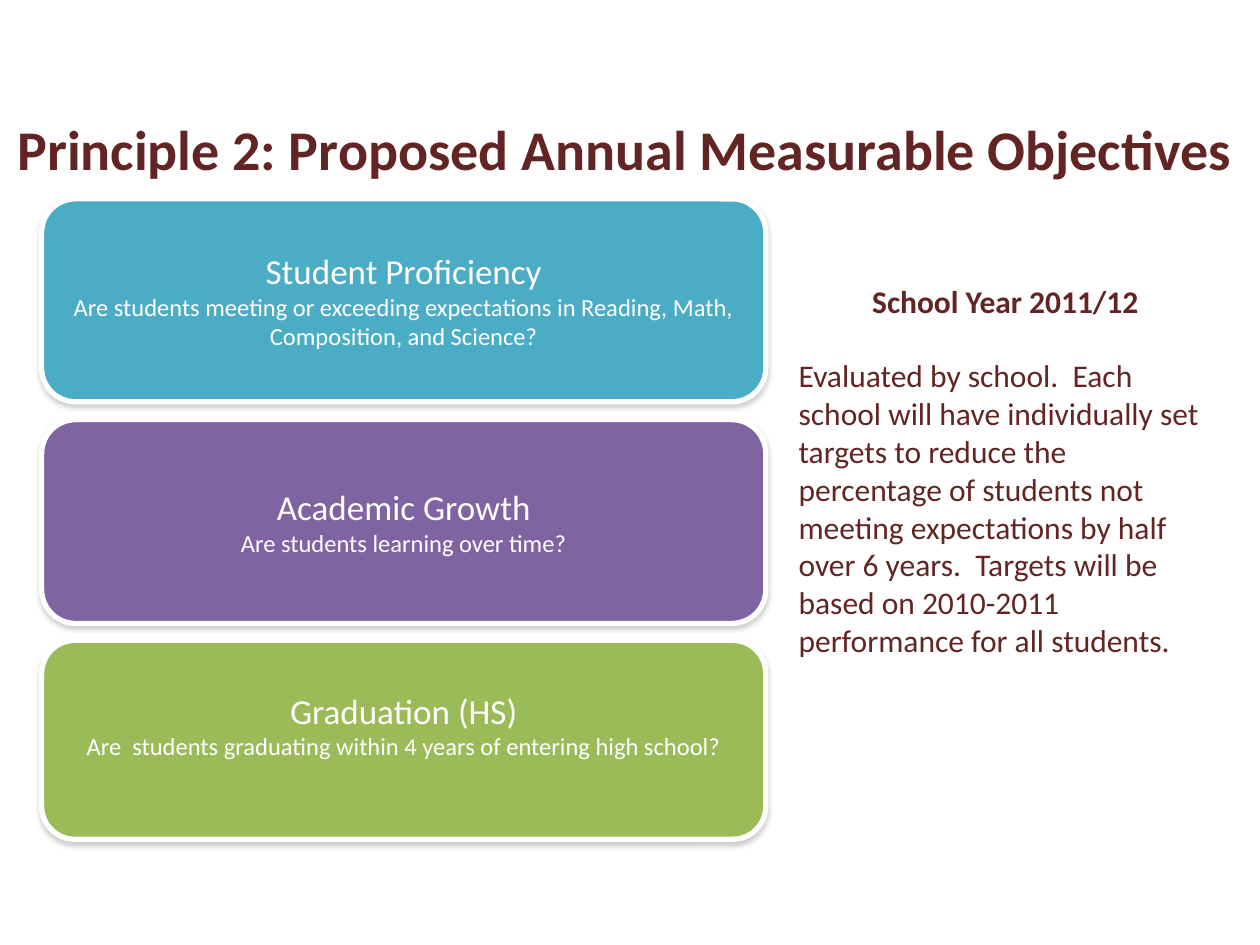
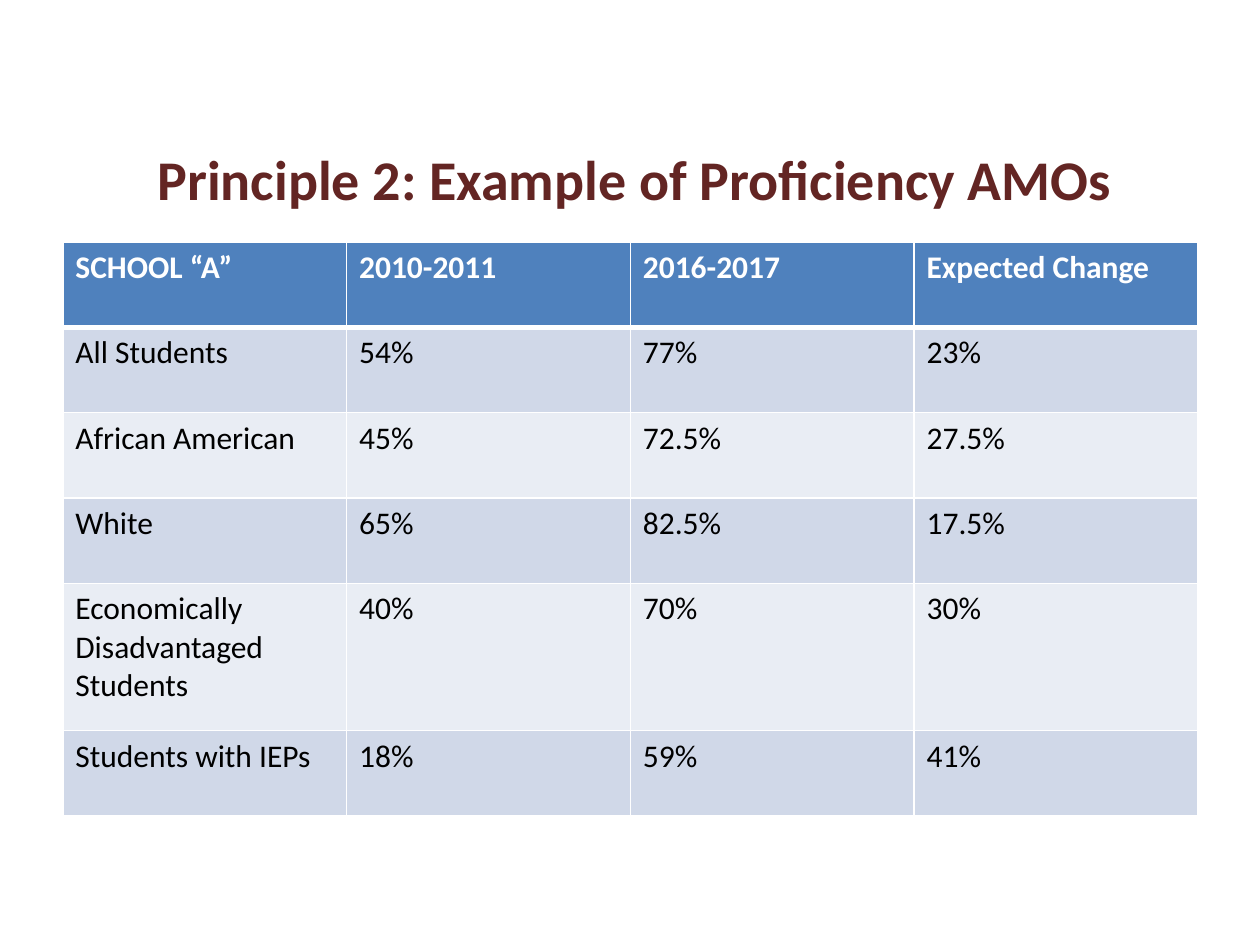
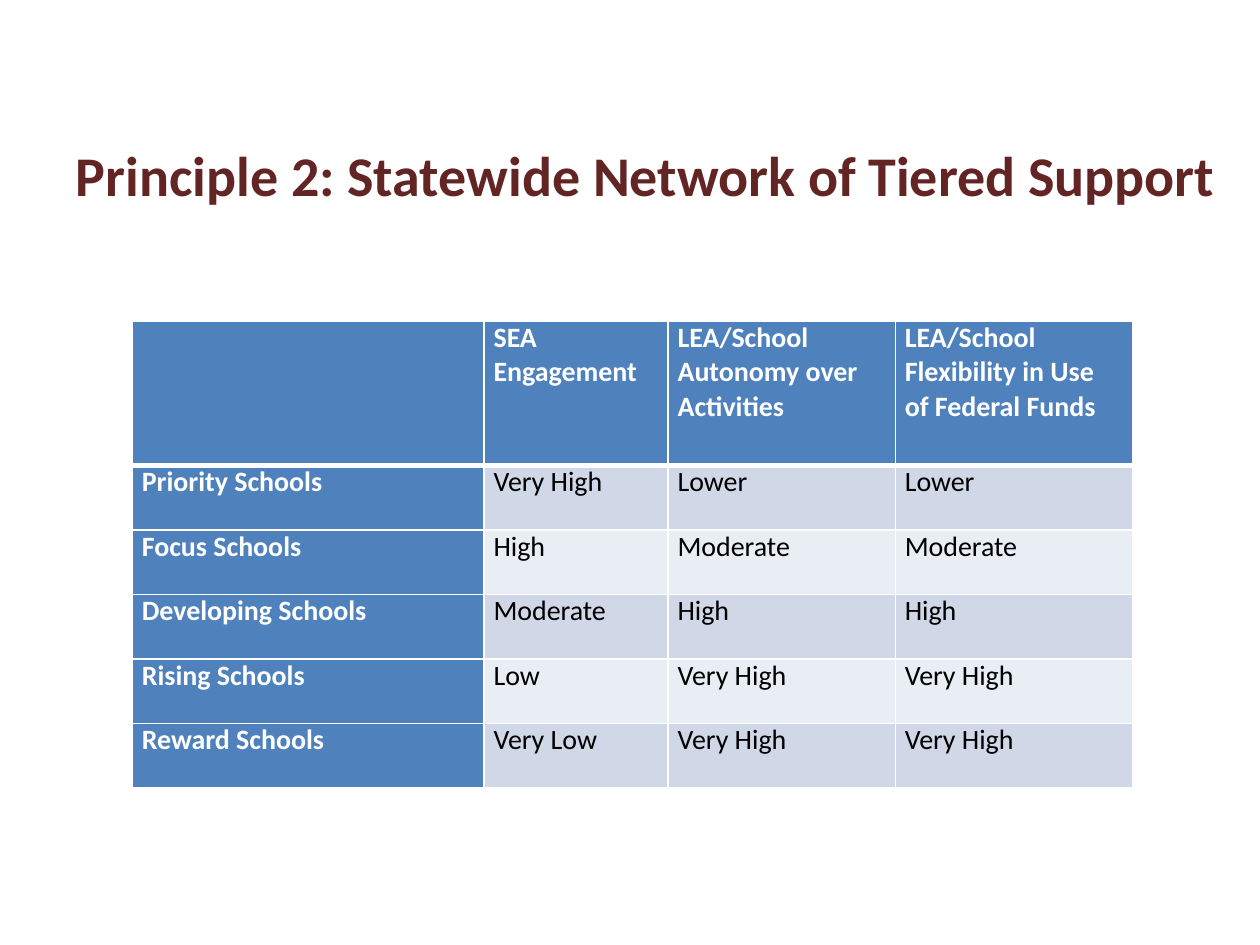
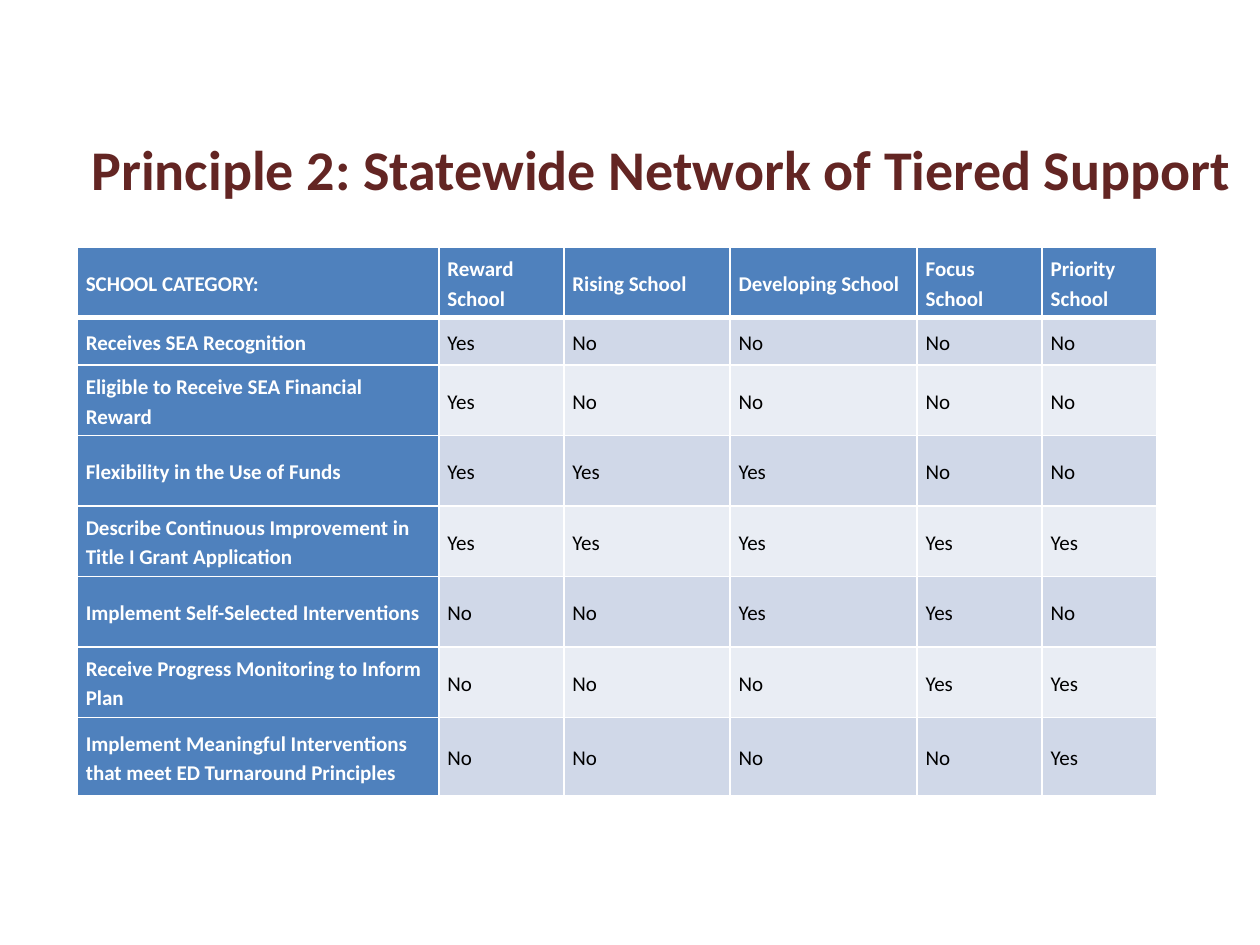
from dataclasses import dataclass
from typing import Optional

from lxml.etree import SubElement
from pptx import Presentation
from pptx.dml.color import RGBColor
from pptx.enum.shapes import MSO_SHAPE
from pptx.enum.text import MSO_ANCHOR, MSO_AUTO_SIZE, PP_ALIGN
from pptx.oxml.ns import qn
from pptx.slide import Slide
from pptx.table import _Cell
from pptx.util import Cm, Pt

FONT = "Calibri"
MAROON = RGBColor(0x63, 0x25, 0x23)
WHITE = RGBColor(0xFF, 0xFF, 0xFF)
BLACK = RGBColor(0x00, 0x00, 0x00)
TEAL = RGBColor(0x4B, 0xAC, 0xC6)
PURPLE = RGBColor(0x80, 0x64, 0xA2)
GREEN = RGBColor(0x9B, 0xBB, 0x59)
HEADER_BLUE = RGBColor(0x4F, 0x81, 0xBD)
BAND_DARK = RGBColor(0xD0, 0xD8, 0xE8)
BAND_LIGHT = RGBColor(0xE9, 0xED, 0xF4)
SHADOW_GRAY = RGBColor(0x80, 0x80, 0x80)

TITLE_HEIGHT = 3.18
CARD_LEFT, CARD_TOP, CARD_WIDTH, CARD_PITCH = 0.84, 4.01, 14.6, 4.45
NOTE_LEFT = 15.85


@dataclass(frozen=True)
class Title:
    text: str
    left: float
    top: float
    width: float


@dataclass(frozen=True)
class Card:
    heading: str
    question: str
    color: RGBColor
    height: float
    bottom_inset: float = 0.13


@dataclass(frozen=True)
class Note:
    text: str
    top: float
    width: float
    height: float
    align: PP_ALIGN
    bold: bool


@dataclass(frozen=True)
class Grid:
    left: float
    top: float
    column_widths: list[float]
    row_heights: list[float]
    rows: list[list[str]]
    text_size: int
    inset_x: float
    inset_y: float = 0
    header_column: bool = True
    anchor: MSO_ANCHOR = MSO_ANCHOR.TOP
    line_spacing: Optional[float] = None
    space_after: Optional[int] = None


OBJECTIVES_TITLE = Title("Principle 2: Proposed Annual Measurable Objectives", 0, 1.4, 25.2)
PROFICIENCY_TITLE = Title("Principle 2: Example of Proficiency AMOs", 0.2, 2, 25.2)
SUPPORT_TEXT = "Principle 2: Statewide Network of Tiered Support"
LEVELS_TITLE = Title(SUPPORT_TEXT, 1.27, 1.93, 23.5)
CATEGORIES_TITLE = Title(SUPPORT_TEXT, 1.27, 1.8, 24.13)

CARDS = [
    Card(
        "Student Proficiency",
        "Are students meeting or exceeding expectations in Reading, Math, Composition, and Science?",
        TEAL, 4.09,
    ),
    Card("Academic Growth", "Are students learning over time?", PURPLE, 4.11),
    Card(
        "Graduation (HS)",
        "Are  students graduating within 4 years of entering high school?",
        GREEN, 4.01, bottom_inset=0.72,
    ),
]

NOTES = [
    Note("School Year 2011/12", 5.56, 8.84, 1.03, PP_ALIGN.CENTER, True),
    Note(
        "Evaluated by school.  Each school will have individually set targets to reduce "
        "the percentage of students not meeting expectations by half over 6 years.  "
        "Targets will be based on 2010-2011 performance for all students.",
        7.06, 8.69, 6.4, PP_ALIGN.LEFT, False,
    ),
]

PROFICIENCY_GRID = Grid(
    left=1.27, top=4.88,
    column_widths=[5.72] * 4,
    row_heights=[1.72] * 4 + [2.97, 1.72],
    rows=[
        ["SCHOOL “A”", "2010-2011", "2016-2017", "Expected Change"],
        ["All Students", "54%", "77%", "23%"],
        ["African American", "45%", "72.5%", "27.5%"],
        ["White", "65%", "82.5%", "17.5%"],
        ["Economically Disadvantaged Students", "40%", "70%", "30%"],
        ["Students with IEPs", "18%", "59%", "41%"],
    ],
    text_size=18, inset_x=0.25, inset_y=0.13, header_column=False,
)

LEVELS_GRID = Grid(
    left=2.67, top=6.47,
    column_widths=[7.09, 3.71, 4.58, 4.78],
    row_heights=[2.91] + [1.3] * 5,
    rows=[
        ["", "SEA Engagement", "LEA/School Autonomy over Activities",
         "LEA/School Flexibility in Use of Federal Funds"],
        ["Priority Schools", "Very High", "Lower", "Lower"],
        ["Focus Schools", "High", "Moderate", "Moderate"],
        ["Developing Schools", "Moderate", "High", "High"],
        ["Rising Schools", "Low", "Very High", "Very High"],
        ["Reward Schools", "Very Low", "Very High", "Very High"],
    ],
    text_size=16, inset_x=0.19,
)

CATEGORIES_GRID = Grid(
    left=1.56, top=4.98,
    column_widths=[7.29, 2.52, 3.35, 3.77, 2.52, 2.3],
    row_heights=[1.42, 0.96] + [1.42] * 5 + [1.59],
    rows=[
        ["SCHOOL CATEGORY:", "Reward School", "Rising School", "Developing School",
         "Focus School", "Priority School"],
        ["Receives SEA Recognition", "Yes", "No", "No", "No", "No"],
        ["Eligible to Receive SEA Financial Reward", "Yes", "No", "No", "No", "No"],
        ["Flexibility in the Use of Funds", "Yes", "Yes", "Yes", "No", "No"],
        ["Describe Continuous Improvement in Title I Grant Application",
         "Yes", "Yes", "Yes", "Yes", "Yes"],
        ["Implement Self-Selected Interventions", "No", "No", "Yes", "Yes", "No"],
        ["Receive Progress Monitoring to Inform Plan", "No", "No", "No", "Yes", "Yes"],
        ["Implement Meaningful Interventions that meet ED Turnaround Principles",
         "No", "No", "No", "No", "Yes"],
    ],
    text_size=12, inset_x=0.17, anchor=MSO_ANCHOR.MIDDLE,
    line_spacing=1.15, space_after=10,
)


def style_runs(paragraph, size: int, color: RGBColor, bold: bool = False) -> None:
    for run in paragraph.runs:
        run.font.name = FONT
        run.font.size = Pt(size)
        run.font.bold = bold
        run.font.color.rgb = color


def add_titled_slide(deck, title: Title) -> Slide:
    slide = deck.slides.add_slide(deck.slide_layouts[5])
    heading = slide.shapes.title
    heading.left, heading.top = Cm(title.left), Cm(title.top)
    heading.width, heading.height = Cm(title.width), Cm(TITLE_HEIGHT)
    frame = heading.text_frame
    frame.text = title.text
    frame.vertical_anchor = MSO_ANCHOR.MIDDLE
    frame.paragraphs[0].alignment = PP_ALIGN.CENTER
    style_runs(frame.paragraphs[0], 32, MAROON, bold=True)
    return slide


def add_soft_shadow(shape) -> None:
    shape.shadow.inherit = False
    effects = shape._element.spPr.find(qn("a:effectLst"))
    shadow = SubElement(
        effects, qn("a:outerShdw"), blurRad=str(Pt(3.1)), dist=str(Pt(1.6)),
        dir="5400000", rotWithShape="0",
    )
    color = SubElement(shadow, qn("a:srgbClr"), val=str(SHADOW_GRAY))
    SubElement(color, qn("a:alpha"), val="38000")


def add_card(slide: Slide, card: Card, position: int) -> None:
    box = slide.shapes.add_shape(
        MSO_SHAPE.ROUNDED_RECTANGLE, Cm(CARD_LEFT), Cm(CARD_TOP + position * CARD_PITCH),
        Cm(CARD_WIDTH), Cm(card.height),
    )
    box.fill.solid()
    box.fill.fore_color.rgb = card.color
    box.line.color.rgb = WHITE
    box.line.width = Pt(3)
    add_soft_shadow(box)
    frame = box.text_frame
    frame.text = f"{card.heading}\n{card.question}"
    frame.word_wrap = True
    frame.vertical_anchor = MSO_ANCHOR.MIDDLE
    frame.margin_bottom = Cm(card.bottom_inset)
    for paragraph, size in zip(frame.paragraphs, (20, 14)):
        paragraph.alignment = PP_ALIGN.CENTER
        style_runs(paragraph, size, WHITE)


def add_note(slide: Slide, note: Note) -> None:
    box = slide.shapes.add_textbox(Cm(NOTE_LEFT), Cm(note.top), Cm(note.width), Cm(note.height))
    frame = box.text_frame
    frame.text = note.text
    frame.word_wrap = True
    frame.auto_size = MSO_AUTO_SIZE.SHAPE_TO_FIT_TEXT
    frame.paragraphs[0].alignment = note.align
    style_runs(frame.paragraphs[0], 18, MAROON, note.bold)


def add_borders(cell: _Cell, row: int) -> None:
    properties = cell._tc.get_or_add_tcPr()
    widths = {"L": 1, "R": 1, "T": 3 if row == 1 else 1, "B": 3 if row == 0 else 1}
    for side, width in widths.items():
        line = SubElement(properties, qn(f"a:ln{side}"), w=str(Pt(width)))
        fill = SubElement(line, qn("a:solidFill"))
        SubElement(fill, qn("a:srgbClr"), val=str(WHITE))


def fill_cell(cell: _Cell, grid: Grid, row: int, column: int) -> None:
    is_header = row == 0 or (grid.header_column and column == 0)
    band = BAND_DARK if row % 2 else BAND_LIGHT
    add_borders(cell, row)
    cell.fill.solid()
    cell.fill.fore_color.rgb = HEADER_BLUE if is_header else band
    cell.margin_left = cell.margin_right = Cm(grid.inset_x)
    cell.margin_top = cell.margin_bottom = Cm(grid.inset_y)
    cell.vertical_anchor = grid.anchor
    cell.text_frame.text = grid.rows[row][column]
    paragraph = cell.text_frame.paragraphs[0]
    paragraph.line_spacing = grid.line_spacing
    if grid.space_after is not None:
        paragraph.space_after = Pt(grid.space_after)
    style_runs(paragraph, grid.text_size, WHITE if is_header else BLACK, is_header)


def add_grid(slide: Slide, grid: Grid) -> None:
    table = slide.shapes.add_table(
        len(grid.row_heights), len(grid.column_widths), Cm(grid.left), Cm(grid.top),
        Cm(sum(grid.column_widths)), Cm(sum(grid.row_heights)),
    ).table
    table.first_col = grid.header_column
    for column, width in zip(table.columns, grid.column_widths):
        column.width = Cm(width)
    for row, height in enumerate(grid.row_heights):
        table.rows[row].height = Cm(height)
        for column in range(len(grid.column_widths)):
            fill_cell(table.cell(row, column), grid, row, column)


def main() -> None:
    deck = Presentation()
    deck.slide_width, deck.slide_height = Cm(25.4), Cm(19.05)

    objectives = add_titled_slide(deck, OBJECTIVES_TITLE)
    for position, card in enumerate(CARDS):
        add_card(objectives, card, position)
    for note in NOTES:
        add_note(objectives, note)

    for title, grid in (
        (PROFICIENCY_TITLE, PROFICIENCY_GRID),
        (LEVELS_TITLE, LEVELS_GRID),
        (CATEGORIES_TITLE, CATEGORIES_GRID),
    ):
        add_grid(add_titled_slide(deck, title), grid)

    deck.save("out.pptx")


if __name__ == "__main__":
    main()
